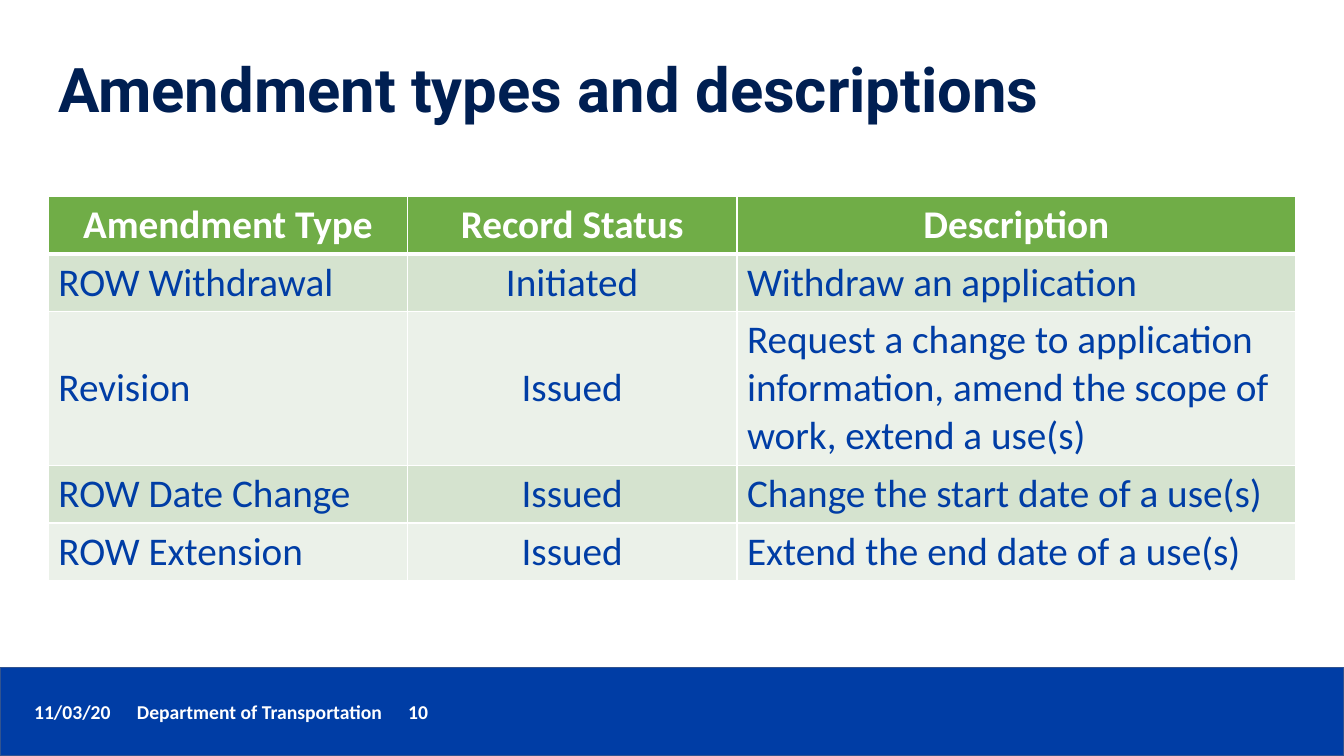
from dataclasses import dataclass

import lxml.etree
import pptx
import pptx.dml.color
import pptx.enum.shapes
import pptx.enum.text
import pptx.oxml.ns
import pptx.util

Inches = pptx.util.Inches
Pt = pptx.util.Pt
Align = pptx.enum.text.PP_ALIGN
Anchor = pptx.enum.text.MSO_ANCHOR

COLORS = {
    "white": "FFFFFF",
    "blue": "003DA5",
    "navy": "001F52",
    "outline": "31538F",
    "header": "70AD47",
    "odd": "D5E3CF",
    "even": "EBF1E9",
}


@dataclass
class TextStyle:
    size: float
    color: str
    font: str = "Calibri"
    bold: bool = True


@dataclass
class Column:
    heading: str
    width: float
    alignment: Align
    anchor: Anchor


@dataclass
class Amendment:
    kind: str
    status: str
    description: str
    height: float = 0.57


TITLE_STYLE = TextStyle(44, "navy", "Roboto")
FOOTER_STYLE = TextStyle(14, "white")
HEADING_STYLE = TextStyle(28, "white")
BODY_STYLE = TextStyle(28, "blue", bold=False)

COLUMNS = [
    Column("Amendment Type", 3.56, Align.LEFT, Anchor.MIDDLE),
    Column("Record Status", 3.27, Align.CENTER, Anchor.MIDDLE),
    Column("Description", 5.54, Align.LEFT, Anchor.TOP),
]
AMENDMENTS = [
    Amendment("ROW Withdrawal", "Initiated", "Withdraw an application"),
    Amendment(
        "Revision",
        "Issued",
        "Request a change to application information, "
        "amend the scope of work, extend a use(s)",
        1.53,
    ),
    Amendment("ROW Date Change", "Issued", "Change the start date of a use(s)"),
    Amendment("ROW Extension", "Issued", "Extend the end date of a use(s)"),
]
HEADER_HEIGHT = 0.57
FOOTER_TABS = [1.02, 3.71]


def rgb(name: str) -> pptx.dml.color.RGBColor:
    return pptx.dml.color.RGBColor.from_string(COLORS[name])


def add_child(parent, tag: str, **attributes):
    return lxml.etree.SubElement(parent, pptx.oxml.ns.qn(tag), attributes)


def style_paragraph(paragraph, style: TextStyle) -> None:
    paragraph.font.name = style.font
    paragraph.font.size = Pt(style.size)
    paragraph.font.bold = style.bold
    paragraph.font.color.rgb = rgb(style.color)


def add_text(slide, left: float, top: float, width: float, height: float,
             text: str, style: TextStyle, tabs=()):
    frame = slide.shapes.add_textbox(
        Inches(left), Inches(top), Inches(width), Inches(height)
    ).text_frame
    frame.word_wrap = True
    frame.vertical_anchor = Anchor.MIDDLE
    paragraph = frame.paragraphs[0]
    paragraph.text = text
    if tabs:
        tab_list = add_child(paragraph._p.get_or_add_pPr(), "a:tabLst")
        for position in tabs:
            add_child(tab_list, "a:tab", pos=str(Inches(position)), algn="l")
    style_paragraph(paragraph, style)
    return paragraph


def add_border(cell, side: str, width: float) -> None:
    line = add_child(cell._tc.get_or_add_tcPr(), f"a:ln{side}", w=str(Pt(width)))
    add_child(add_child(line, "a:solidFill"), "a:srgbClr", val=COLORS["white"])


def fill_cell(cell, text: str, style: TextStyle, fill: str, alignment: Align,
              anchor: Anchor, top_border: float, bottom_border: float) -> None:
    borders = {"L": 1, "R": 1, "T": top_border, "B": bottom_border}
    for side, width in borders.items():
        add_border(cell, side, width)
    cell.fill.solid()
    cell.fill.fore_color.rgb = rgb(fill)
    cell.vertical_anchor = anchor
    paragraph = cell.text_frame.paragraphs[0]
    paragraph.text = text
    paragraph.alignment = alignment
    style_paragraph(paragraph, style)


def add_amendment_table(slide) -> None:
    heights = [HEADER_HEIGHT] + [amendment.height for amendment in AMENDMENTS]
    table = slide.shapes.add_table(
        len(heights), len(COLUMNS), Inches(0.48), Inches(1.95),
        Inches(sum(column.width for column in COLUMNS)), Inches(sum(heights)),
    ).table
    for row, height in zip(table.rows, heights):
        row.height = Inches(height)
    for column_index, column in enumerate(COLUMNS):
        table.columns[column_index].width = Inches(column.width)
        fill_cell(table.cell(0, column_index), column.heading, HEADING_STYLE,
                  "header", Align.CENTER, Anchor.MIDDLE, 1, 3)
    for row_index, amendment in enumerate(AMENDMENTS, start=1):
        values = (amendment.kind, amendment.status, amendment.description)
        fill = "odd" if row_index % 2 else "even"
        top_border = 3 if row_index == 1 else 1
        for column_index, (column, value) in enumerate(zip(COLUMNS, values)):
            fill_cell(table.cell(row_index, column_index), value, BODY_STYLE,
                      fill, column.alignment, column.anchor, top_border, 1)


def add_footer(slide) -> None:
    band = slide.shapes.add_shape(
        pptx.enum.shapes.MSO_SHAPE.RECTANGLE,
        Inches(0), Inches(6.62), Inches(13.33), Inches(0.88),
    )
    band.shadow.inherit = False
    band.fill.solid()
    band.fill.fore_color.rgb = rgb("blue")
    band.line.color.rgb = rgb("outline")
    band.line.width = Pt(1)
    add_text(slide, 0.24, 6.89, 10.06, 0.34,
             "11/03/20\tDepartment of Transportation\t10",
             FOOTER_STYLE, FOOTER_TABS)


def main() -> None:
    presentation = pptx.Presentation()
    presentation.slide_width = Inches(13.33)
    presentation.slide_height = Inches(7.5)
    slide = presentation.slides.add_slide(presentation.slide_layouts[6])
    add_footer(slide)
    title = add_text(slide, 0.48, 0.19, 11.5, 1.45,
                     "Amendment types and descriptions", TITLE_STYLE)
    title.line_spacing = 0.9
    add_amendment_table(slide)
    presentation.save("out.pptx")


if __name__ == "__main__":
    main()
